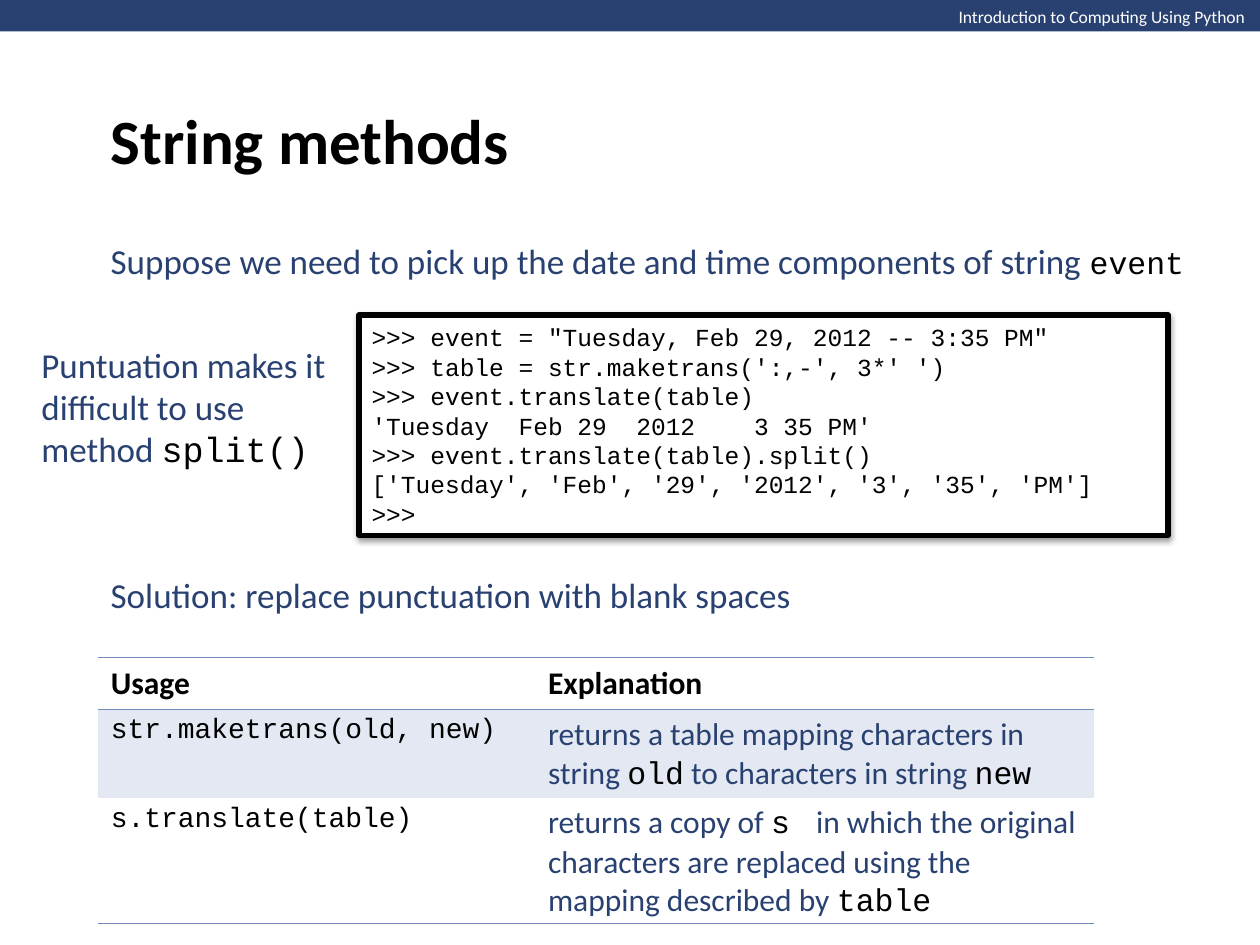
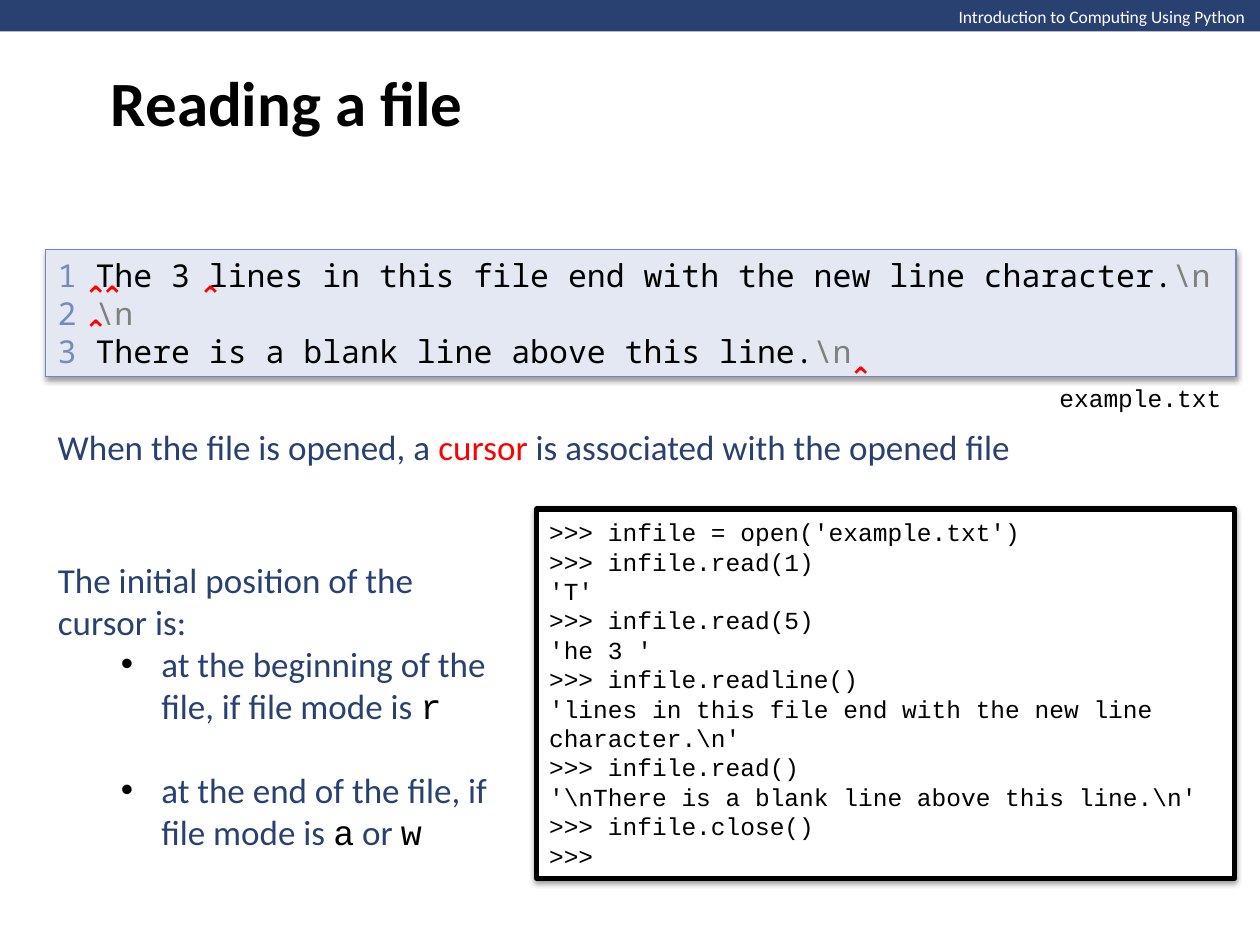
from dataclasses import dataclass
from lxml import etree
from pptx import Presentation
from pptx.dml.color import RGBColor
from pptx.enum.shapes import MSO_SHAPE
from pptx.enum.text import MSO_ANCHOR, MSO_AUTO_SIZE, PP_ALIGN
from pptx.oxml.ns import qn
from pptx.util import Inches, Pt

RECT = MSO_SHAPE.RECTANGLE
TOP, MID = MSO_ANCHOR.TOP, MSO_ANCHOR.MIDDLE
LEFT = PP_ALIGN.LEFT
FIXED = MSO_AUTO_SIZE.NONE
TITLE_BODY, TITLE_ONLY = 1, 5
PLAIN_TABLE = "{2D5ABB26-0587-4C30-8999-92F81FD0307C}"


@dataclass(frozen=True)
class Theme:
    navy: str = "294171"
    blue: str = "748CBC"
    edge: str = "7088BA"
    pale: str = "E3E8F2"
    black: str = "000000"
    white: str = "FFFFFF"
    gray: str = "808080"
    red: str = "FF0000"
    sans: str = "Calibri"
    code: str = "Courier New"
    mono: str = "Noto Sans Mono"
    mark: str = "Open Sans"
    title: int = 36
    text: int = 20
    cell: int = 18
    usage: int = 16
    shell: int = 14
    note: int = 10


T = Theme()


# Text helpers
def style(font, size=None, face=None, color=None, bold=None):
    if size:
        font.size = Pt(size)
    if face:
        font.name = face
    if color:
        font.color.rgb = RGBColor.from_string(color)
    if bold is not None:
        font.bold = bold


def code(text, size=None):
    """A run of code inside prose."""
    return text, dict(face=T.code, color=T.black, size=size)


def tint(text, color):
    return text, dict(color=color)


def write(frame, lines, size=T.text, face=T.sans, color=T.navy, bold=None):
    """Fill a frame; a line is a string or a list of strings and styled runs."""
    for i, line in enumerate(lines):
        para = frame.paragraphs[0] if i == 0 else frame.add_paragraph()
        style(para.font, size, face, color, bold)
        para.alignment = LEFT
        for part in [line] if isinstance(line, str) else line:
            text, look = (part, {}) if isinstance(part, str) else part
            run = para.add_run()
            run.text = text
            style(run.font, **look)


def inch(box):
    return [Inches(n) for n in box]


def place(shape, box):
    shape.left, shape.top, shape.width, shape.height = inch(box)


def label(slide, box, line, wrap=True, anchor=MID, **look):
    frame = slide.shapes.add_textbox(*inch(box)).text_frame
    frame.word_wrap = wrap
    frame.vertical_anchor = anchor
    write(frame, [line], **look)


# Boxes
def block(slide, box, fill, line=None, width=0):
    shape = slide.shapes.add_shape(RECT, *inch(box))
    shape.shadow.inherit = False
    shape.fill.solid()
    shape.fill.fore_color.rgb = RGBColor.from_string(fill)
    if line:
        shape.line.color.rgb = RGBColor.from_string(line)
        shape.line.width = Pt(width)
    else:
        shape.line.fill.background()
    return shape


def shade(shape):
    """Give a shape a soft shadow straight below it."""
    effects = shape._element.spPr.find(qn("a:effectLst"))
    outer = etree.SubElement(effects, qn("a:outerShdw"), blurRad=str(Pt(3.1)),
                             dist=str(Pt(1.6)), dir="5400000", rotWithShape="0")
    color = etree.SubElement(outer, qn("a:srgbClr"), val=T.black)
    etree.SubElement(color, qn("a:alpha"), val="38000")


def panel(slide, box, lines, fill=T.white, line=T.black, width=3, **look):
    shape = block(slide, box, fill, line, width)
    shade(shape)
    frame = shape.text_frame
    frame.word_wrap = True
    frame.vertical_anchor = MID
    write(frame, lines, **look)


def shell(slide, box, lines):
    panel(slide, box, lines, size=T.shell, face=T.code, color=T.black)


# Parts that every slide shares
def start(deck, layout, title, top):
    slide = deck.slides.add_slide(deck.slide_layouts[layout])
    block(slide, (0, 0, 10, 0.25), T.navy)
    label(slide, (7.51, 0, 2.5, 0.27), "Introduction to Computing Using Python",
          wrap=False, anchor=TOP, size=T.note, color=T.white)
    head = slide.shapes.title
    place(head, (0.78, top, 8.5, 1.61))
    head.text_frame.vertical_anchor = MID
    write(head.text_frame, [title], T.title, color=T.black, bold=True)
    return slide


# Table of methods
def rule(cell, side):
    line = etree.SubElement(cell._tc.get_or_add_tcPr(), qn("a:" + side), w=str(Pt(1)))
    fill = etree.SubElement(line, qn("a:solidFill"))
    etree.SubElement(fill, qn("a:srgbClr"), val=T.blue)


def methods(slide, box, cols, heights, rows):
    table = slide.shapes.add_table(len(rows), len(cols), *inch(box)).table
    table._tbl.tblPr.find(qn("a:tableStyleId")).text = PLAIN_TABLE
    for col, width in zip(table.columns, cols):
        col.width = Inches(width)
    for i, (row, height) in enumerate(zip(rows, heights)):
        table.rows[i].height = Inches(height)
        for j, line in enumerate(row):
            cell = table.cell(i, j)
            if i == 0:
                rule(cell, "lnT")
            if i in (0, len(rows) - 1):
                rule(cell, "lnB")
            if i == 1:
                cell.fill.solid()
                cell.fill.fore_color.rgb = RGBColor.from_string(T.pale)
            else:
                cell.fill.background()
            if i == 0:
                look = dict(size=T.cell, color=T.black, bold=True)
            elif j == 0:
                look = dict(size=T.usage, face=T.code, color=T.black)
            else:
                look = dict(size=T.cell)
            write(cell.text_frame, [line], **look)


# List with an unmarked lead line
def bullets(body, box, lead, items):
    place(body, box)
    frame = body.text_frame
    frame.auto_size = FIXED
    frame.vertical_anchor = MID
    write(frame, [lead] + items)
    for i, para in enumerate(frame.paragraphs):
        para.space_before = Pt(24 if i > 1 else 0)
        props = para._p.get_or_add_pPr()
        if i == 0:
            props.set("marL", "0")
            props.set("indent", "0")
            marks = [etree.Element(qn("a:buNone"))]
        else:
            para.level = 1
            props.set("marL", str(Inches(0.82)))
            props.set("indent", str(Inches(-0.32)))
            color = etree.Element(qn("a:buClr"))
            etree.SubElement(color, qn("a:srgbClr"), val=T.black)
            marks = [color, etree.Element(qn("a:buFont"), typeface="Arial"),
                     etree.Element(qn("a:buChar"), char="•")]
        base = props.find(qn("a:defRPr"))
        for mark in marks:
            base.addprevious(mark)


# Sample file with the cursor's stops
def sample(slide, box, stops):
    x, y, w, h = box
    end = tint("\\n", T.gray)
    panel(slide, box, [
        [tint("1", T.blue),
         " The 3 lines in this file end with the new line character.", end],
        [tint("2 ", T.blue), end],
        [tint("3", T.blue), " There is a blank line above this line.", end],
    ], T.pale, T.edge, 0.75, size=T.cell, face=T.mono, color=T.black)
    for dx, dy in stops:
        label(slide, (x + dx, y + dy, 0.41, 0.37), "⌃", wrap=False,
              size=T.usage, face=T.mark, color=T.red, bold=True)
    label(slide, (x + w - 1.5, y + h, 1.5, 0.34), "example.txt", wrap=False,
          size=T.shell, face=T.code, color=T.black)


def strings(deck):
    slide = start(deck, TITLE_ONLY, "String methods", 0.3)
    label(slide, (0.78, 1.85, 8.89, 0.44),
          ["Suppose we need to pick up the date and time components of string ",
           code("event", T.cell)], wrap=False)
    shell(slide, (2.85, 2.5, 6.42, 1.75), [
        ">>> event = \"Tuesday, Feb 29, 2012 -- 3:35 PM\"",
        ">>> table = str.maketrans(':,-', 3*' ')",
        ">>> event.translate(table)",
        "'Tuesday  Feb 29  2012    3 35 PM'",
        ">>> event.translate(table).split()",
        "['Tuesday', 'Feb', '29', '2012', '3', '35', 'PM']",
        ">>>",
    ])
    label(slide, (0.23, 2.67, 2.59, 1.11),
          ["Puntuation makes it difficult to use method ", code("split()")])
    label(slide, (0.78, 4.5, 8.88, 0.44),
          "Solution: replace punctuation with blank spaces")
    methods(slide, (0.78, 5.22, 7.9, 2.11), (3.47, 4.43), (0.41, 0.7, 1), [
        ("Usage", "Explanation"),
        ("str.maketrans(old, new)",
         ["returns a table mapping characters in string ", code("old"),
          " to characters in string ", code("new")]),
        ("s.translate(table)",
         ["returns a copy of ", code("s "),
          " in which the original characters are replaced using the mapping described by ",
          code("table")]),
    ])


def reading(deck):
    slide = start(deck, TITLE_BODY, "Reading a file", 0)
    sample(slide, (0.36, 1.98, 9.45, 1.01),
           [(0.21, 0.18), (0.34, 0.18), (1.12, 0.18), (0.21, 0.45), (6.28, 0.82)])
    label(slide, (0.36, 3.32, 9.45, 0.44),
          ["When the file is opened, a ", tint("cursor ", T.red),
           "is associated with the opened file"])
    shell(slide, (4.26, 4.04, 5.54, 2.93), [
        ">>> infile = open('example.txt')",
        ">>> infile.read(1)",
        "'T'",
        ">>> infile.read(5)",
        "'he 3 '",
        ">>> infile.readline()",
        "'lines in this file end with the new line character.\\n'",
        ">>> infile.read()",
        "'\\nThere is a blank line above this line.\\n'",
        ">>> infile.close()",
        ">>>",
    ])
    bullets(slide.placeholders[1], (0.36, 4.37, 3.63, 2.46),
            "The initial position of the cursor is:", [
                ["at the beginning of the file, if file mode is ", code("r")],
                ["at the end of the file, if file mode is ", code("a"),
                 " or ", code("w")],
            ])


def main():
    deck = Presentation()
    deck.slide_width, deck.slide_height = Inches(10), Inches(7.5)
    strings(deck)
    reading(deck)
    deck.save("out.pptx")


if __name__ == "__main__":
    main()
